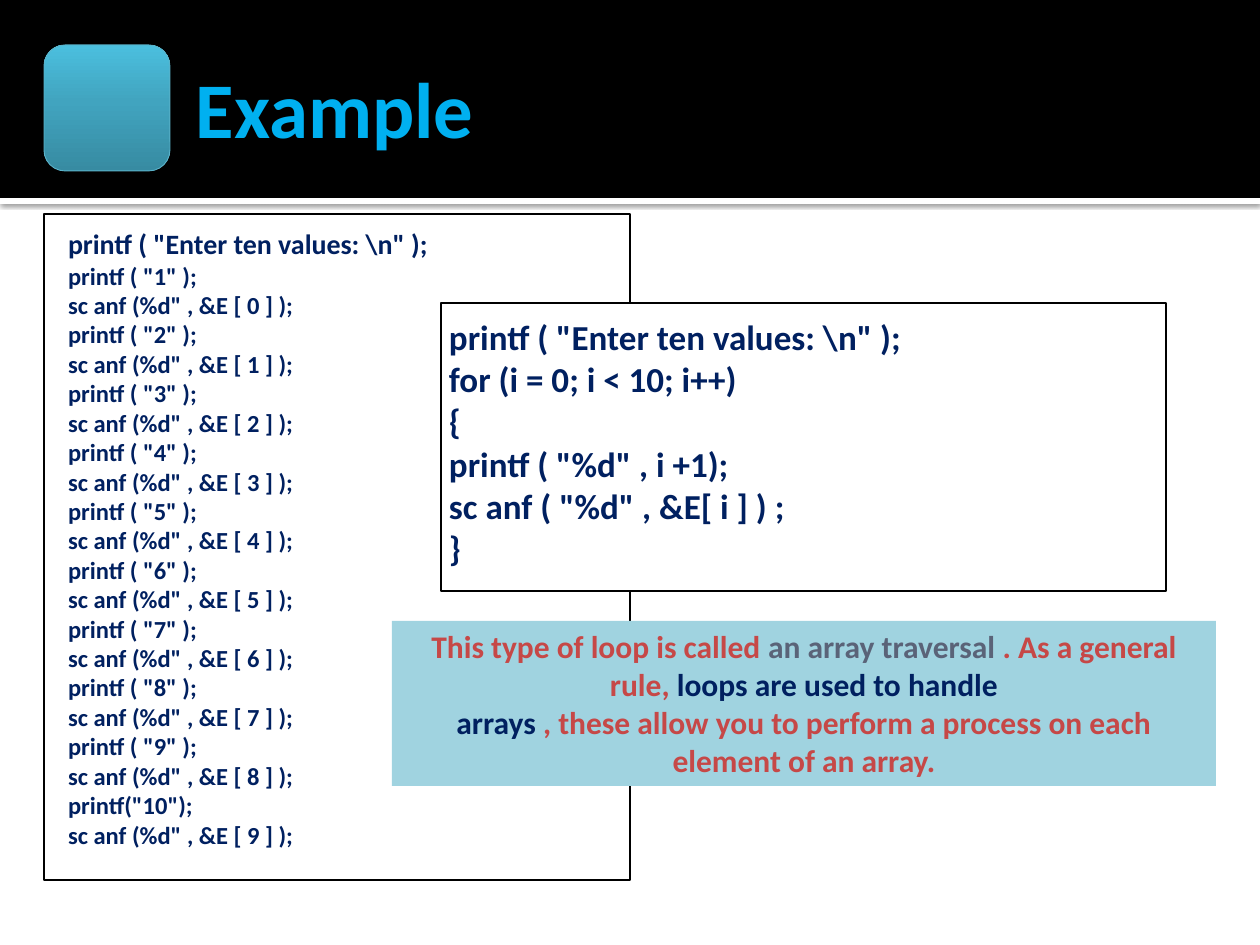
"""Build the array traversal example slide."""
from copy import deepcopy

from lxml.etree import SubElement
from pptx import Presentation
from pptx.dml.color import RGBColor
from pptx.enum.shapes import MSO_SHAPE as Shape
from pptx.enum.text import MSO_ANCHOR as Anchor, MSO_AUTO_SIZE as AutoSize, PP_ALIGN as Align
from pptx.oxml.ns import qn
from pptx.util import Pt

BLACK = RGBColor(0x00, 0x00, 0x00)
WHITE = RGBColor(0xFF, 0xFF, 0xFF)
NAVY = RGBColor(0x00, 0x20, 0x60)
SKY = RGBColor(0x00, 0xB0, 0xF0)
RED = RGBColor(0xC6, 0x48, 0x47)
SLATE = RGBColor(0x5A, 0x63, 0x78)
PALE_TEAL = RGBColor(0xA0, 0xD3, 0xE0)
TEAL_EDGE = RGBColor(0x5B, 0xB3, 0xCA)
TEAL_DARK = RGBColor(0x37, 0x8B, 0xA2)
TEAL_MID = RGBColor(0x41, 0xA4, 0xBF)
TEAL_LIGHT = RGBColor(0x4B, 0xBF, 0xDE)
PX = 914400 / 126


def write(paragraph, text, size=18, color=NAVY, align=Align.LEFT):
    paragraph.alignment = align
    paragraph.space_before = paragraph.space_after = Pt(0)
    run = paragraph.add_run()
    run.text = text
    run.font.name = "Calibri"
    run.font.size = Pt(size)
    run.font.bold = True
    run.font.color.rgb = color


def cast_shadow(shape, opacity, blur, distance):
    effects = shape._element.spPr.find(qn("a:effectLst"))
    outer = SubElement(effects, qn("a:outerShdw"), blurRad=str(Pt(blur)),
                       dist=str(Pt(distance)), dir="5400000", rotWithShape="0")
    shade = SubElement(outer, qn("a:srgbClr"), val=str(BLACK))
    SubElement(shade, qn("a:alpha"), val=str(opacity * 1000))


prs = Presentation()
prs.slide_width, prs.slide_height = int(1260 * PX), int(945 * PX)
slide = prs.slides.add_slide(prs.slide_layouts[1])
shapes = slide.shapes
title, long_code = shapes.title, slide.placeholders[1]

stripe = shapes.add_shape(Shape.RECTANGLE, 0, 0, 0, 0)
header = shapes.add_shape(Shape.RECTANGLE, 0, 0, 0, 0)
loop_code = shapes.add_shape(Shape.RECTANGLE, 0, 0, 0, 0)
badge = shapes.add_shape(Shape.ROUNDED_RECTANGLE, 0, 0, 0, 0)
remark = shapes.add_shape(Shape.RECTANGLE, 0, 0, 0, 0)

for part, left, top, width, height in [
    (stripe, 0, 198, 1260, 6),
    (header, 0, 0, 1260, 198),
    (long_code, 44, 214, 586, 666),
    (loop_code, 441, 303, 725, 288),
    (title, 63, 21, 1134, 173),
    (badge, 44, 45, 126, 126),
    (remark, 392, 621, 824, 165),
]:
    part.left, part.top = int(left * PX), int(top * PX)
    part.width, part.height = int(width * PX), int(height * PX)
    shapes._spTree.append(part._element)

for part, color in [(stripe, WHITE), (header, BLACK), (loop_code, WHITE), (remark, PALE_TEAL)]:
    part.shadow.inherit = False
    part.fill.solid()
    part.fill.fore_color.rgb = color
    part.line.fill.background()
cast_shadow(stripe, 60, 2.5, 0.8)

badge.shadow.inherit = False
badge.fill.gradient()
badge.fill.gradient_angle = 90
stop_list = badge._element.spPr.find(".//" + qn("a:gsLst"))
stop_list.insert(1, deepcopy(stop_list[0]))
for stop, position, color in zip(badge.fill.gradient_stops, (0, 0.55, 1),
                                 (TEAL_DARK, TEAL_MID, TEAL_LIGHT)):
    stop.position = position
    stop.color.rgb = color
badge.line.color.rgb = TEAL_EDGE
badge.line.width = Pt(0.5)
cast_shadow(badge, 38, 3.1, 2)

title_frame = title.text_frame
title_frame.auto_size = AutoSize.NONE
title_frame.vertical_anchor = Anchor.MIDDLE
title_frame.margin_left = int(133 * PX)
write(title_frame.paragraphs[0], "Example", size=45, color=SKY)

prompt = 'printf ( "Enter ten values: \\n" );'
long_lines = [(prompt, 16)]
for index in range(10):
    label = f'printf ( "{index + 1}" );' if index < 9 else 'printf("10");'
    long_lines += [(label, 14), (f'sc anf (%d" , &E [ {index} ] );', 14)]
loop_lines = [(line, 20) for line in (
    prompt, "for (i = 0; i < 10; i++)", "{", 'printf ( "%d" , i +1);',
    'sc anf ( "%d" , &E[ i ] ) ;', "}")]

for box, lines in [(long_code, long_lines), (loop_code, loop_lines)]:
    box.fill.solid()
    box.fill.fore_color.rgb = WHITE
    box.line.color.rgb = BLACK
    box.line.width = Pt(0.75)
    frame = box.text_frame
    frame.auto_size = AutoSize.NONE
    frame.word_wrap = True
    frame.vertical_anchor = Anchor.TOP
    frame.margin_left, frame.margin_top = int(8 * PX), int(13 * PX)
    for number, (line, size) in enumerate(lines):
        paragraph = frame.add_paragraph() if number else frame.paragraphs[0]
        write(paragraph, line, size=size)

for paragraph in long_code.text_frame.paragraphs:
    properties = paragraph._p.get_or_add_pPr()
    properties.set("marL", str(int(60 * PX)))
    properties.set("indent", str(int(-44 * PX)))
    SubElement(properties, qn("a:buNone"))

remark_frame = remark.text_frame
remark_frame.word_wrap = True
remark_frame.auto_size = AutoSize.SHAPE_TO_FIT_TEXT
remark_frame.vertical_anchor = Anchor.TOP
opening, closing = remark_frame.paragraphs[0], remark_frame.add_paragraph()
for paragraph, text, color in [
    (opening, "This type of loop is called ", RED),
    (opening, "an array traversal ", SLATE),
    (opening, ". As a general rule, ", RED),
    (opening, "loops are used to handle", NAVY),
    (closing, "arrays ", NAVY),
    (closing, ", these allow you to perform a process on each element of an array.", RED),
]:
    write(paragraph, text, color=color, align=Align.CENTER)

prs.save("out.pptx")
